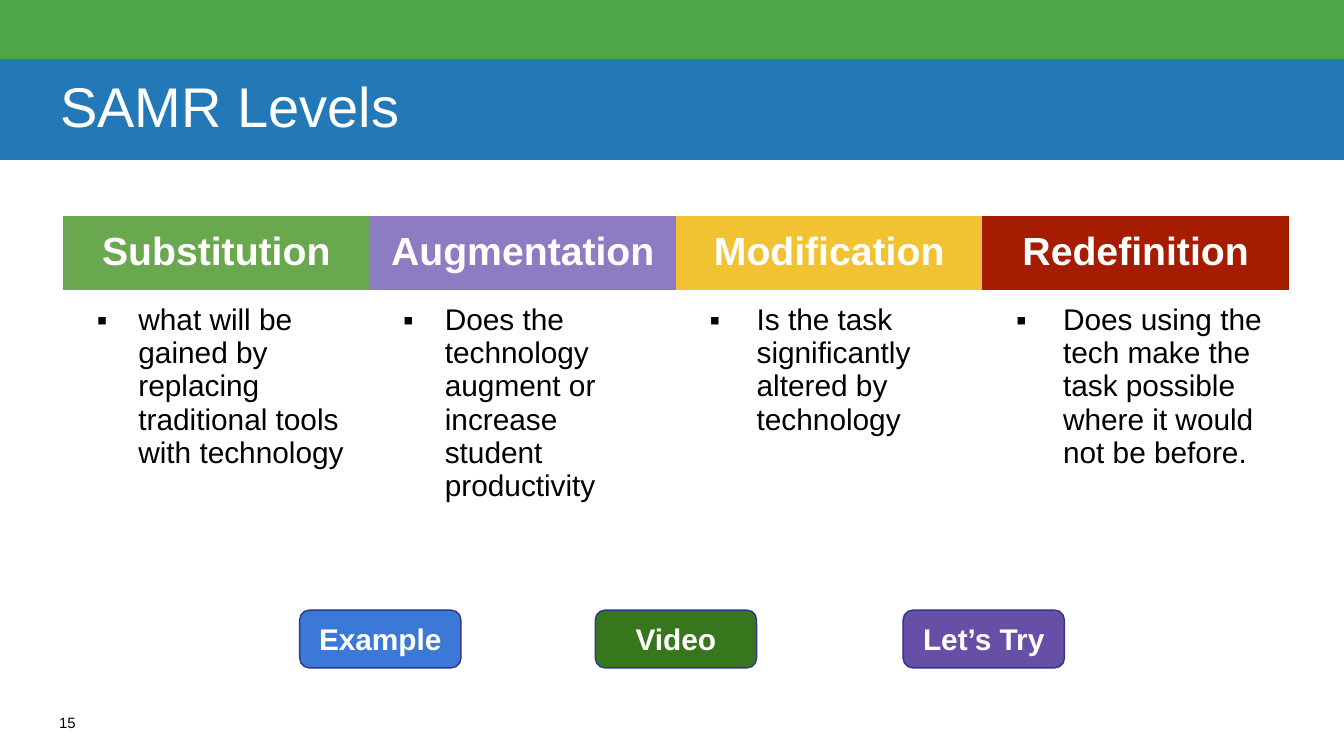
from lxml import etree
from pptx import Presentation
from pptx.dml.color import RGBColor
from pptx.enum.shapes import MSO_SHAPE
from pptx.enum.text import MSO_ANCHOR, PP_ALIGN
from pptx.oxml.ns import qn
from pptx.util import Inches, Pt

RECT = MSO_SHAPE.RECTANGLE
ROUND = MSO_SHAPE.ROUNDED_RECTANGLE
MIDDLE = MSO_ANCHOR.MIDDLE
LEFT, CENTER = PP_ALIGN.LEFT, PP_ALIGN.CENTER

WHITE = RGBColor(0xFF, 0xFF, 0xFF)
BLACK = RGBColor(0, 0, 0)
GREEN = RGBColor(0x4E, 0xA8, 0x48)
BLUE = RGBColor(0x23, 0x79, 0xB8)
LEAF = RGBColor(0x6A, 0xA8, 0x4F)
LILAC = RGBColor(0x8E, 0x7C, 0xC3)
GOLD = RGBColor(0xF1, 0xC2, 0x32)
RED = RGBColor(0xA6, 0x1C, 0x00)
SKY = RGBColor(0x3C, 0x78, 0xD8)
FOREST = RGBColor(0x38, 0x76, 0x1D)
PURPLE = RGBColor(0x67, 0x4E, 0xA7)
NAVY = RGBColor(0x2B, 0x38, 0x90)

FONT = "Arial"
PLAIN_STYLE = "{2D5ABB26-0587-4C30-8999-92F81FD0307C}"

LEVELS = [
    ("Substitution", LEAF, 0.46, 0.31,
     "what will be gained by replacing traditional tools with technology"),
    ("Augmentation", LILAC, 0.46, 0.31,
     "Does the technology augment or increase student productivity"),
    ("Modification", GOLD, 0.5, 0.35,
     "Is the task significantly altered by technology"),
    ("Redefinition", RED, 0.5, 0.35,
     "Does using the tech make the task possible where it would not be before."),
]
BUTTONS = [(0, "Example", SKY), (2.2, "Video", FOREST), (4.49, "Let’s Try", PURPLE)]


def write(frame, text, size, color, bold=False, align=LEFT):
    frame.text = text
    para = frame.paragraphs[0]
    para.alignment = align
    font = para.runs[0].font
    font.name = FONT
    font.size = Pt(size)
    font.bold = bold
    font.color.rgb = color
    return para


def inset(item, side, top):
    item.margin_left = item.margin_right = Inches(side)
    item.margin_top = item.margin_bottom = Inches(top)


def add_box(slide, kind, left, top, width, height, fill):
    box = slide.shapes.add_shape(
        kind, Inches(left), Inches(top), Inches(width), Inches(height))
    box.shadow.inherit = False
    box.fill.solid()
    box.fill.fore_color.rgb = fill
    box.line.fill.background()
    return box


def add_bullet(para, indent, hang):
    props = para._p.get_or_add_pPr()
    props.set("marL", str(Inches(indent)))
    props.set("indent", str(-Inches(hang)))
    tint = etree.SubElement(props, qn("a:buClr"))
    etree.SubElement(tint, qn("a:srgbClr")).set("val", str(BLACK))
    etree.SubElement(props, qn("a:buFont")).set("typeface", FONT)
    etree.SubElement(props, qn("a:buChar")).set("char", "▪")


def add_header(slide, left, top, width, strip, band):
    add_box(slide, RECT, left, top, width, strip, GREEN)
    title = add_box(slide, RECT, left, top + strip, width, band, BLUE)
    frame = title.text_frame
    frame.word_wrap = True
    frame.vertical_anchor = MIDDLE
    inset(frame, 0.45, 0)
    write(frame, "SAMR Levels", 30, WHITE).line_spacing = 0.9


def add_levels(slide, left, top, width, head, body):
    table = slide.shapes.add_table(
        2, len(LEVELS), Inches(left), Inches(top),
        Inches(width), Inches(head + body)).table
    table.first_row = table.horz_banding = False
    table._tbl.tblPr.find(qn("a:tableStyleId")).text = PLAIN_STYLE
    table.rows[0].height = Inches(head)
    table.rows[1].height = Inches(body)
    for col, (name, fill, indent, hang, text) in enumerate(LEVELS):
        table.columns[col].width = Inches(width / len(LEVELS))
        label, detail = table.cell(0, col), table.cell(1, col)
        for cell in (label, detail):
            inset(cell, 0.1, 0.1)
        label.fill.solid()
        label.fill.fore_color.rgb = fill
        write(label.text_frame, name, 21, WHITE, True, CENTER)
        detail.fill.background()
        para = write(detail.text_frame, text, 16, BLACK)
        add_bullet(para, indent, hang)


def add_buttons(slide, left, top, width, height):
    for shift, text, fill in BUTTONS:
        button = add_box(slide, ROUND, left + shift, top, width, height, fill)
        button.line.color.rgb = NAVY
        button.line.width = Pt(0.75)
        frame = button.text_frame
        frame.word_wrap = True
        frame.vertical_anchor = MIDDLE
        inset(frame, 0.1, 0.1)
        write(frame, text, 16, WHITE, True, CENTER)


def add_number(slide, left, top, width, height):
    box = slide.shapes.add_textbox(
        Inches(left), Inches(top), Inches(width), Inches(height))
    frame = box.text_frame
    frame.word_wrap = True
    inset(frame, 0, 0)
    write(frame, "15", 8, BLACK)


def main():
    deck = Presentation()
    deck.slide_width = Inches(10)
    deck.slide_height = Inches(10 * 9 / 16)
    slide = deck.slides.add_slide(deck.slide_layouts[6])
    add_header(slide, 0, 0, 10, 0.44, 0.75)
    add_number(slide, 0.44, 5.31, 0.37, 0.2)
    add_levels(slide, 0.47, 1.61, 9.12, 0.32, 1.86)
    add_buttons(slide, 2.23, 4.54, 1.2, 0.43)
    deck.save("out.pptx")


if __name__ == "__main__":
    main()
